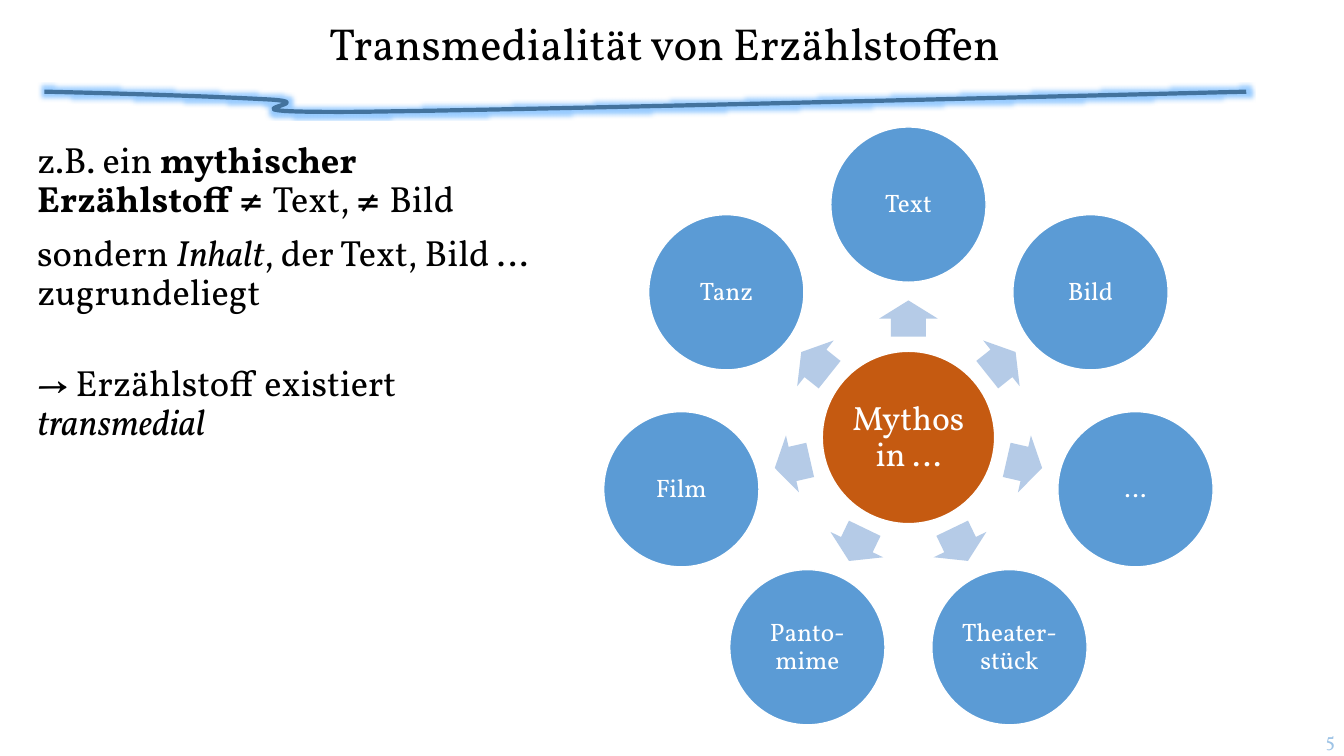
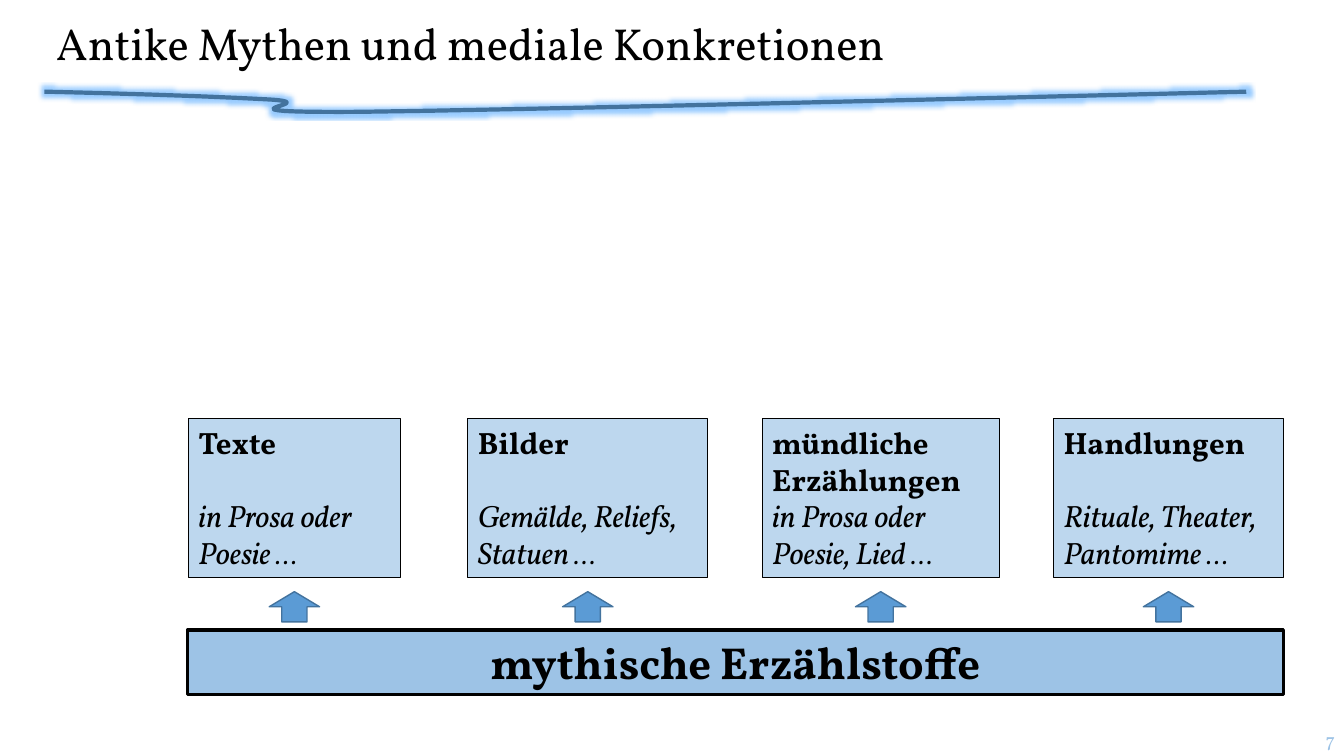
from dataclasses import dataclass
from math import cos, radians, sin
from typing import NamedTuple

from lxml.etree import SubElement
from pptx import Presentation
from pptx.dml.color import RGBColor
from pptx.enum.shapes import MSO_SHAPE as Kind
from pptx.enum.text import MSO_ANCHOR as Anchor, PP_ALIGN as Align
from pptx.oxml.ns import qn
from pptx.util import Inches, Pt

FONT, SIGN = "Vollkorn", "TeX Gyre Schola"
BLACK, WHITE = "000000", "FFFFFF"
BLUE, NAVY, SKY, PALE, MIST = "5B9BD5", "43739E", "9DC3E6", "BDD7EE", "B5CBE7"
RUST, GLOW = "C55A11", "99CCFF"

START = (0.44, 0.91)
CURVES = [
    ((1.31, 0.93), (2.19, 0.96), (2.71, 0.99)),
    ((3.23, 1.03), (1.95, 1.12), (3.56, 1.11)),
    ((5.17, 1.09), (8.76, 1.00), (12.36, 0.91)),
]
STEPS = 24


class Run(NamedTuple):
    text: str
    bold: bool = False
    italic: bool = False
    font: str = FONT


class Para(NamedTuple):
    runs: list[Run]
    before: float = 0


class Box(NamedTuple):
    left: float
    top: float
    width: float
    height: float


@dataclass
class Card:
    left: float
    width: float
    head: str
    body: str
    gap: float = 26.4

    @property
    def mid(self) -> float:
        return self.left + self.width / 2


MEDIA = ["Text", "Bild", "…", "Theater-stück", "Panto-mime", "Film", "Tanz"]

CARDS = [
    Card(1.87, 2.1, "Texte", "in Prosa oder Poesie …"),
    Card(4.64, 2.38, "Bilder", "Gemälde, Reliefs, Statuen …"),
    Card(7.56, 2.35, "mündliche Erzählungen", "in Prosa oder Poesie, Lied …", gap=0),
    Card(10.45, 2.28, "Handlungen", "Rituale, Theater, Pantomime …"),
]

CLAIM = [
    Para([Run("z.B. ein "), Run("mythischer Erzählstoff ", bold=True),
          Run("≠ ", font=SIGN), Run("Text, "), Run("≠ ", font=SIGN), Run("Bild")], 10),
    Para([Run("sondern "), Run("Inhalt", italic=True),
          Run(", der Text, Bild … zugrundeliegt")], 10),
    Para([Run("→ Erzählstoff existiert "), Run("transmedial", italic=True)], 37),
]


def tint(code: str) -> RGBColor:
    return RGBColor.from_string(code)


def plain(text: str, **style) -> list[Para]:
    return [Para([Run(text, **style)])]


def write(shape, paras: list[Para], *, size: float, color: str = BLACK,
          align=Align.LEFT, anchor=Anchor.TOP, lead: float = 1.0,
          inset: float | None = None) -> None:
    """Fill a shape's text frame with formatted paragraphs."""
    frame = shape.text_frame
    frame.word_wrap = True
    frame.vertical_anchor = anchor
    if inset is not None:
        frame.margin_left = frame.margin_right = Inches(inset)
        frame.margin_top = frame.margin_bottom = Inches(inset)
    for i, para in enumerate(paras):
        line = frame.paragraphs[0] if i == 0 else frame.add_paragraph()
        line.alignment = align
        line.line_spacing = lead
        line.space_before = Pt(para.before)
        for part in para.runs:
            run = line.add_run()
            run.text = part.text
            font = run.font
            font.name, font.size = part.font, Pt(size)
            font.bold, font.italic = part.bold, part.italic
            font.color.rgb = tint(color)


def label(slide, box: Box, paras: list[Para], **style) -> None:
    write(slide.shapes.add_textbox(*map(Inches, box)), paras, **style)


def draw(slide, kind, box: Box, fill: str, line: str | None = None,
         width: float = 1, turn: float = 0):
    shape = slide.shapes.add_shape(kind, *map(Inches, box))
    shape.shadow.inherit = False
    shape.fill.solid()
    shape.fill.fore_color.rgb = tint(fill)
    shape.rotation = turn
    if line:
        shape.line.color.rgb = tint(line)
        shape.line.width = Pt(width)
    else:
        shape.line.fill.background()
    return shape


def trace() -> list[tuple[int, int]]:
    """Points along the cubic curves of the title rule."""
    points, a = [], START
    for b, c, d in CURVES:
        for n in range(1, STEPS + 1):
            t = n / STEPS
            u = 1 - t
            points.append(tuple(
                Inches(u**3 * p + 3 * u * u * t * q + 3 * u * t * t * r + t**3 * s)
                for p, q, r, s in zip(a, b, c, d)))
        a = d
    return points


def swash(slide) -> None:
    """Draw the glowing rule below the title."""
    path = slide.shapes.build_freeform(*map(Inches, START))
    path.add_line_segments(trace(), close=False)
    shape = path.convert_to_shape()
    shape.fill.background()
    shape.line.color.rgb = tint(NAVY)
    shape.line.width = Pt(3)
    shape.shadow.inherit = False
    effects = shape.element.spPr.find(qn("a:effectLst"))
    glow = SubElement(effects, qn("a:glow"), rad=str(Pt(5)))
    SubElement(glow, qn("a:srgbClr"), val=GLOW)


def page(deck, title: str, number: int, align=Align.LEFT):
    """Add a slide with the shared rule, title and page number."""
    slide = deck.slides.add_slide(deck.slide_layouts[6])
    swash(slide)
    label(slide, Box(0.46, 0, 12.27, 0.91), plain(title), size=32,
          align=align, anchor=Anchor.MIDDLE, lead=0.9)
    label(slide, Box(12.61, 7.19, 0.73, 0.29), plain(str(number)), size=14,
          color=SKY, align=Align.RIGHT, anchor=Anchor.MIDDLE)
    return slide


def around(x: float, y: float, width: float, height: float) -> Box:
    """Box centred on a point."""
    return Box(x - width / 2, y - height / 2, width, height)


def disc(slide, x: float, y: float, size: float, fill: str, text: str,
         points: float) -> None:
    shape = draw(slide, Kind.OVAL, around(x, y, size, size), fill, WHITE)
    write(shape, plain(text), size=points, color=WHITE, align=Align.CENTER,
          anchor=Anchor.MIDDLE, lead=0.9, inset=0.03)


def wheel(slide) -> None:
    """Draw the hub with its ring of media and arrows."""
    x, y = 9.01, 4.34
    disc(slide, x, y, 1.71, RUST, "Mythos in …", 24)
    for i, name in enumerate(MEDIA):
        angle = i * 360 / len(MEDIA) - 90
        dx, dy = cos(radians(angle)), sin(radians(angle))
        arrow = draw(slide, Kind.RIGHT_ARROW,
                     around(x + 1.18 * dx, y + 1.18 * dy, 0.36, 0.58),
                     MIST, turn=angle % 360)
        arrow.adjustments[0], arrow.adjustments[1] = 0.6, 0.5
        disc(slide, x + 2.31 * dx, y + 2.31 * dy, 1.54, BLUE, name, 18)


def board(slide) -> None:
    """Draw the base bar with the media cards above it."""
    for card in CARDS:
        shape = draw(slide, Kind.RECTANGLE, Box(card.left, 4.15, card.width, 1.58),
                     PALE, BLACK, 0.75)
        write(shape, [Para([Run(card.head, bold=True)]),
                      Para([Run(card.body, italic=True)], card.gap)], size=22)
        draw(slide, Kind.UP_ARROW, around(card.mid, 6.02, 0.5, 0.3), BLUE, NAVY)
    base = draw(slide, Kind.RECTANGLE, Box(1.86, 6.25, 10.87, 0.64), SKY, BLACK, 2.25)
    write(base, plain("mythische Erzählstoffe", bold=True), size=32,
          align=Align.CENTER)


def main() -> None:
    deck = Presentation()
    deck.slide_width, deck.slide_height = Inches(13.33), Inches(7.5)

    slide = page(deck, "Transmedialität von Erzählstoffen", 5, Align.CENTER)
    label(slide, Box(0.27, 1.36, 5.35, 5.83), CLAIM, size=26, lead=0.9)
    wheel(slide)

    board(page(deck, "Antike Mythen und mediale Konkretionen", 7))

    deck.save("out.pptx")


if __name__ == "__main__":
    main()
